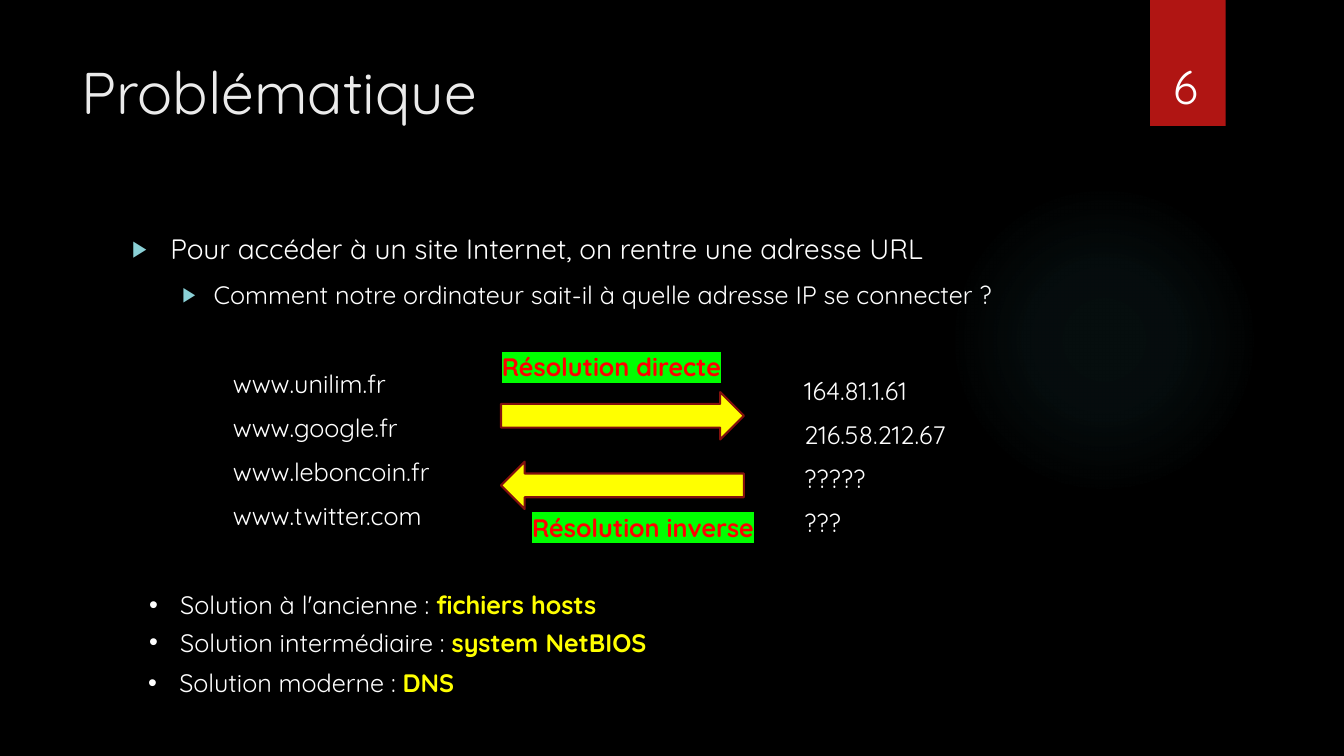
from lxml import etree
from pptx import Presentation
from pptx import util as u
from pptx.dml.color import RGBColor
from pptx.enum import shapes, text
from pptx.oxml import ns, parse_xml

COLORS = {
    "background": "000000", "title": "EBEBEB", "text": "FFFFFF",
    "bullet": "8AD0D6", "glow": "50B9C1", "tab": "B01513",
    "yellow": "FFFF00", "arrow_line": "82100E", "red": "FF0000", "green": "00FF00",
}
CELL = u.Inches(1) / 3  # the slide is a grid of 40 columns by 22.5 rows
COLUMNS, ROWS = 40, 22.5


def rgb(name):
    return RGBColor.from_string(COLORS[name])


def cells(*lengths):
    """Turn columns and rows into slide lengths."""
    return [u.Emu(round(length * CELL)) for length in lengths]


class SlideBuilder:
    def __init__(self, presentation, font="Quicksand", size=18):
        self.font, self.size = font, size
        self.slide = presentation.slides.add_slide(presentation.slide_layouts[1])
        background = self.slide.background.fill
        background.solid()
        background.fore_color.rgb = rgb("background")

    def shape(self, kind, at, fill, line=None, rotation=0):
        shape = self.slide.shapes.add_shape(kind, *cells(*at))
        shape.shadow.inherit = False
        shape.rotation = rotation
        shape.fill.solid()
        shape.fill.fore_color.rgb = rgb(fill)
        if line:
            shape.line.color.rgb = rgb(line)
            shape.line.width = u.Pt(1.5)
        else:
            shape.line.fill.background()
        return shape

    def glow(self, at, color, stops):
        """Draw a circle that fades outwards; stops are (position, opacity) in percent."""
        shape = self.shape(shapes.MSO_SHAPE.OVAL, at, color)
        stop_xml = "".join(
            f'<a:gs pos="{position * 1000}"><a:srgbClr val="{COLORS[color]}">'
            f'<a:alpha val="{opacity * 1000}"/></a:srgbClr></a:gs>'
            for position, opacity in stops)
        gradient = parse_xml(
            f'<a:gradFill {ns.nsdecls("a")}><a:gsLst>{stop_xml}</a:gsLst><a:path path="circle">'
            '<a:fillToRect l="50000" t="50000" r="50000" b="50000"/></a:path></a:gradFill>')
        properties = shape._element.spPr
        properties.replace(properties.find(ns.qn("a:solidFill")), gradient)

    def frame(self, shape, at):
        shape.left, shape.top, shape.width, shape.height = cells(*at)
        frame = shape.text_frame
        frame.word_wrap = True
        frame.auto_size = text.MSO_AUTO_SIZE.NONE
        frame.vertical_anchor = text.MSO_ANCHOR.TOP
        return frame

    def text_box(self, at):
        return self.frame(self.slide.shapes.add_textbox(*cells(*at)), at)

    def title(self, at, words):
        self.paragraph(self.frame(self.slide.shapes.title, at), [(words, "title", False)], size=42)

    def body(self, at):
        return self.frame(self.slide.placeholders[1], at)

    def paragraph(self, frame, runs, size=None, before=0, level=0, indent=(0, 0),
                  bullet=None, bullet_color="text", bullet_size=100, highlight=None):
        """Fill the first paragraph or add one; runs are (words, color, bold)."""
        first = frame.paragraphs[0]
        paragraph = frame.add_paragraph() if first.runs else first
        paragraph.level = level
        paragraph.alignment = text.PP_ALIGN.LEFT
        paragraph.space_before = u.Pt(before)
        properties = paragraph._p.get_or_add_pPr()
        left, hanging = indent
        properties.set("marL", str(u.Inches(left)))
        properties.set("indent", str(u.Inches(hanging)))
        if bullet:
            color = etree.SubElement(properties, ns.qn("a:buClr"))
            etree.SubElement(color, ns.qn("a:srgbClr"), val=COLORS[bullet_color])
            etree.SubElement(properties, ns.qn("a:buSzPct"), val=str(bullet_size * 1000))
            etree.SubElement(properties, ns.qn("a:buFont"), typeface="Arial")
            etree.SubElement(properties, ns.qn("a:buChar"), char=bullet)
        else:
            etree.SubElement(properties, ns.qn("a:buNone"))
        for words, color, bold in runs:
            run = paragraph.add_run()
            run.text = words
            run.font.name = self.font
            run.font.size = u.Pt(size or self.size)
            run.font.bold = bold
            run.font.color.rgb = rgb(color)
            if highlight:
                mark = etree.Element(ns.qn("a:highlight"))
                etree.SubElement(mark, ns.qn("a:srgbClr"), val=COLORS[highlight])
                run._r.get_or_add_rPr().find(ns.qn("a:solidFill")).addnext(mark)


def main():
    presentation = Presentation()
    presentation.slide_width, presentation.slide_height = cells(COLUMNS, ROWS)
    builder = SlideBuilder(presentation)

    builder.glow((28.23, 5.49, 9.24, 9.24), "glow", [(0, 7), (36, 6), (69, 0), (100, 0)])
    builder.shape(shapes.MSO_SHAPE.RECTANGLE, (34.23, 0, 2.25, 3.75), "tab")
    builder.title((2.13, 1.5, 30.87, 4.59), "Problématique")

    body = builder.body((3.63, 6.75, 31.77, 13.77))
    triangle = {"bullet": "▶", "bullet_color": "bullet", "bullet_size": 80}
    builder.paragraph(
        body, [("Pour accéder à un site Internet, on rentre une adresse URL", "text", False)],
        size=20, indent=(0.38, -0.38), **triangle)
    builder.paragraph(
        body,
        [("Comment notre ordinateur sait-il à quelle adresse IP se connecter ?", "text", False)],
        before=10, level=1, indent=(0.81, -0.31), **triangle)
    hosts = ["www.unilim.fr", "www.google.fr", "www.leboncoin.fr", "www.twitter.com"]
    for index, host in enumerate(hosts):
        builder.paragraph(body, [(host, "text", False)], before=10 if index else 41.5,
                          level=1, indent=(1, 0))

    addresses = builder.text_box((23.64, 11.01, 6.66, 5.19))
    for index, address in enumerate(["164.81.1.61", "216.58.212.67", "?????", "???"]):
        builder.paragraph(addresses, [(address, "text", False)], before=10 if index else 0)

    directions = [
        ("Résolution inverse", 15.54, 15.09, 13.74, 180),
        ("Résolution directe", 14.64, 10.32, 11.67, 0),
    ]
    for label, column, row, arrow_row, rotation in directions:
        builder.shape(shapes.MSO_SHAPE.RIGHT_ARROW, (14.91, arrow_row, 7.23, 1.41),
                      "yellow", "arrow_line", rotation)
        builder.paragraph(builder.text_box((column, row, 7.23, 1.2)),
                          [(label, "red", True)], highlight="green")

    solutions = [
        (4.14, 17.4, "Solution à l'ancienne : ", "fichiers hosts"),
        (4.14, 18.51, "Solution intermédiaire : ", "system NetBIOS"),
        (4.11, 19.71, "Solution moderne : ", "DNS"),
    ]
    for column, row, era, answer in solutions:
        builder.paragraph(builder.text_box((column, row, 17.73, 1.2)),
                          [(era, "text", False), (answer, "yellow", True)],
                          indent=(0.31, -0.31), bullet="•")

    builder.paragraph(builder.text_box((34.62, 1.59, 2.34, 1.98)), [("6", "text", False)], size=33)
    presentation.save("out.pptx")


if __name__ == "__main__":
    main()
